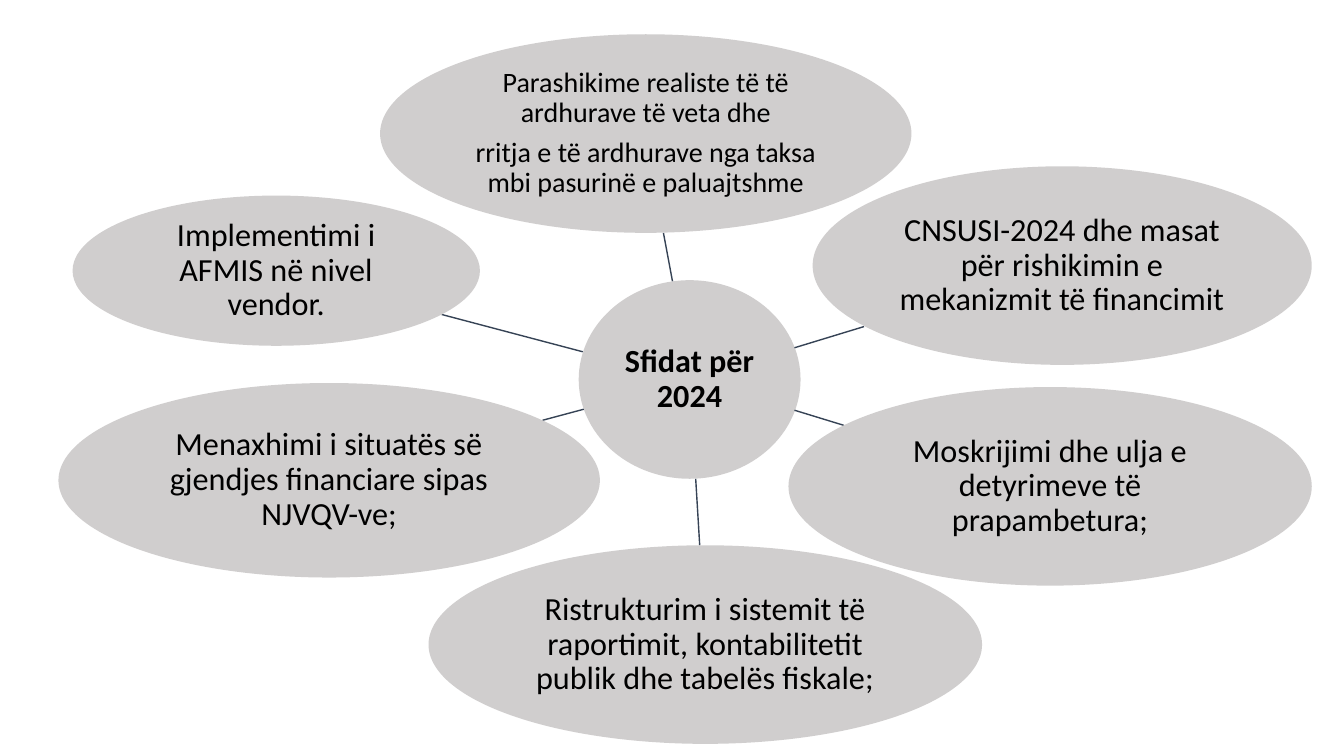
import math
from dataclasses import dataclass

import pptx
import pptx.dml.color
import pptx.enum.shapes
import pptx.enum.text
import pptx.oxml.ns
import pptx.presentation
import pptx.shapes.autoshape
import pptx.slide
import pptx.util
from lxml import etree

EMU_PER_PX = 9144  # 100 px to the inch
FONT_NAME = "Calibri"
BUBBLE_COLOR = "D0CECE"
SPOKE_COLOR = "364355"
TEXT_COLOR = "000000"


@dataclass(frozen=True)
class Bubble:
    left: int
    top: int
    width: int
    height: int
    paragraphs: tuple[str, ...]
    font_size: int = 23
    bold: bool = False
    margin: int = 2

    @property
    def center(self) -> tuple[float, float]:
        return self.left + self.width / 2, self.top + self.height / 2

    def edge_towards(self, other: "Bubble") -> tuple[int, int]:
        """Point where the line between both centers leaves this ellipse."""
        x, y = self.center
        other_x, other_y = other.center
        dx, dy = other_x - x, other_y - y
        reach = 1 / math.hypot(dx / (self.width / 2), dy / (self.height / 2))
        return round(x + dx * reach), round(y + dy * reach)


HUB = Bubble(574, 278, 220, 197, ("Sfidat për 2024",), bold=True)
CHALLENGES = (
    Bubble(
        377, 34, 527, 197,
        (
            "Parashikime realiste të të ardhurave të veta dhe",
            "rritja e të ardhurave nga taksa mbi pasurinë e paluajtshme",
        ),
        font_size=20,
        margin=1,
    ),
    Bubble(806, 165, 495, 197, ("CNSUSI-2024 dhe masat për rishikimin e mekanizmit të financimit",)),
    Bubble(782, 384, 519, 197, ("Moskrijimi dhe ulja e detyrimeve të prapambetura;",)),
    Bubble(
        425, 541, 549, 197,
        ("Ristrukturim i sistemit të raportimit, kontabilitetit publik dhe tabelës fiskale;",),
    ),
    Bubble(58, 380, 537, 193, ("Menaxhimi i situatës së gjendjes financiare sipas NJVQV-ve;",)),
    Bubble(72, 194, 404, 149, ("Implementimi i AFMIS në nivel vendor.",)),
)


def px(length: int) -> pptx.util.Emu:
    return pptx.util.Emu(length * EMU_PER_PX)


def rgb(color: str) -> pptx.dml.color.RGBColor:
    return pptx.dml.color.RGBColor.from_string(color)


def write_text(shape: pptx.shapes.autoshape.Shape, bubble: Bubble) -> None:
    text_frame = shape.text_frame
    text_frame.text = "\n".join(bubble.paragraphs)
    text_frame.word_wrap = True
    text_frame.vertical_anchor = pptx.enum.text.MSO_ANCHOR.MIDDLE
    text_frame.margin_left = text_frame.margin_right = px(bubble.margin)
    text_frame.margin_top = text_frame.margin_bottom = px(bubble.margin)
    for paragraph in text_frame.paragraphs:
        paragraph.alignment = pptx.enum.text.PP_ALIGN.CENTER
        paragraph.line_spacing = 0.9
        paragraph.space_after = pptx.util.Pt(round(bubble.font_size * 0.35))
        for run in paragraph.runs:
            run.font.name = FONT_NAME
            run.font.size = pptx.util.Pt(bubble.font_size)
            run.font.bold = bubble.bold
            run.font.color.rgb = rgb(TEXT_COLOR)


def add_bubble(slide: pptx.slide.Slide, bubble: Bubble) -> None:
    shape = slide.shapes.add_shape(
        pptx.enum.shapes.MSO_SHAPE.OVAL,
        px(bubble.left), px(bubble.top), px(bubble.width), px(bubble.height),
    )
    shape.shadow.inherit = False
    shape.fill.solid()
    shape.fill.fore_color.rgb = rgb(BUBBLE_COLOR)
    shape.line.fill.background()
    write_text(shape, bubble)


def add_spoke(slide: pptx.slide.Slide, hub: Bubble, challenge: Bubble) -> None:
    begin_x, begin_y = hub.edge_towards(challenge)
    end_x, end_y = challenge.edge_towards(hub)
    connector = slide.shapes.add_connector(
        pptx.enum.shapes.MSO_CONNECTOR.STRAIGHT,
        px(begin_x), px(begin_y), px(end_x), px(end_y),
    )
    connector.line.color.rgb = rgb(SPOKE_COLOR)
    connector.line.width = pptx.util.Pt(1)
    etree.SubElement(connector._element.spPr, pptx.oxml.ns.qn("a:effectLst"))


def build_presentation() -> pptx.presentation.Presentation:
    presentation = pptx.Presentation()
    presentation.slide_width = px(1333)
    presentation.slide_height = px(750)
    slide = presentation.slides.add_slide(presentation.slide_layouts[6])
    add_bubble(slide, HUB)
    for challenge in CHALLENGES:
        add_spoke(slide, HUB, challenge)
        add_bubble(slide, challenge)
    return presentation


if __name__ == "__main__":
    build_presentation().save("out.pptx")
